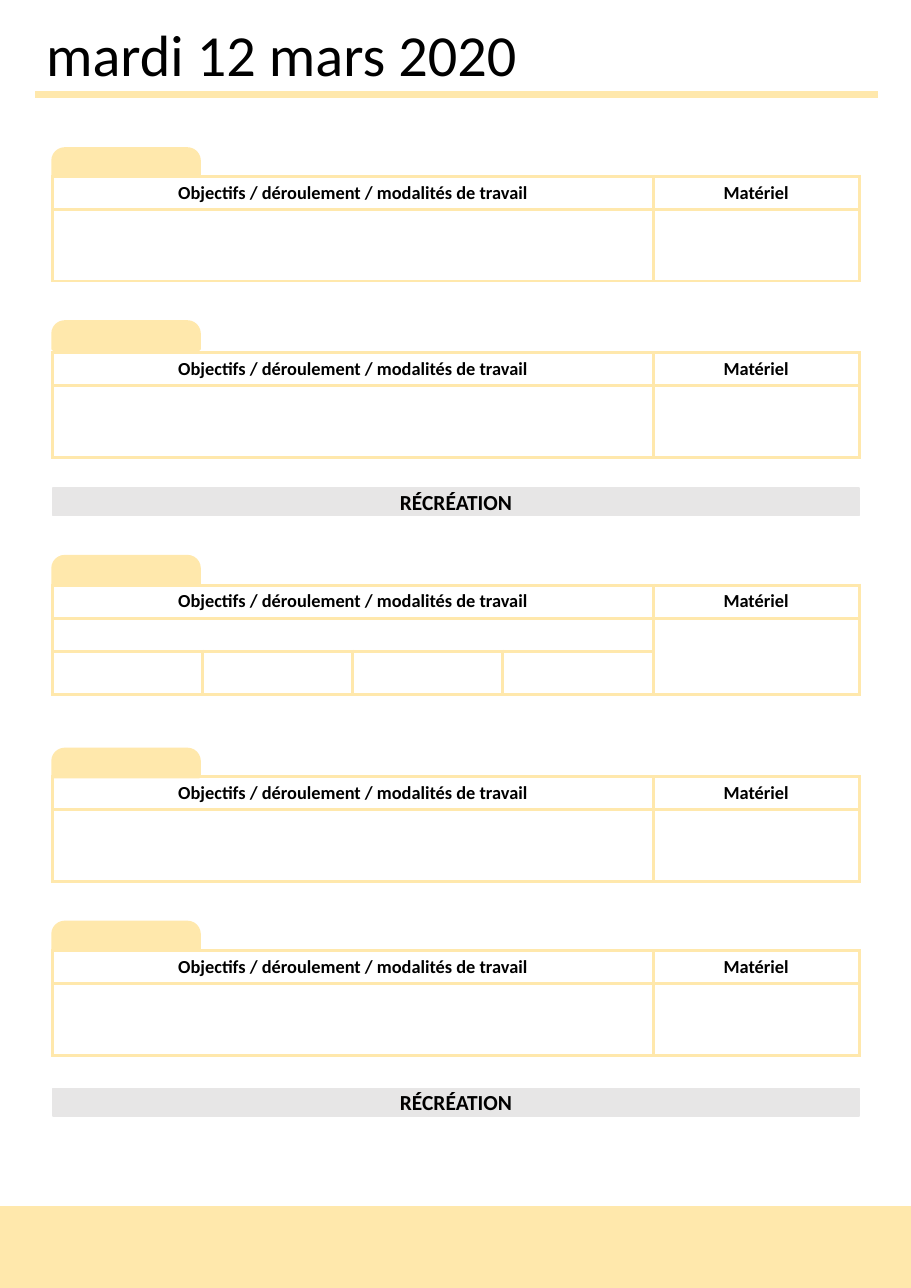
from pptx import Presentation
from pptx import util as u
from pptx.dml.color import RGBColor
from pptx.enum import shapes, text
from pptx.oxml import parse_xml
from pptx.oxml.ns import nsdecls

# Content
TITLE = "mardi 12 mars 2020"
HEADS = ["Objectifs / déroulement / modalités de travail", "Matériel"]
BREAK = "RÉCRÉATION"
PLAIN = {"cols": [545, 187], "rows": [30, 65], "spans": []}
SPLIT = {"cols": [136, 136, 136, 137, 187], "rows": [30, 30, 39],
         "spans": [(0, 0, 0, 3), (1, 0, 1, 3), (1, 4, 2, 4)]}
# (top of tab, top of table, layout)
LESSONS = [(135, 160, PLAIN), (292, 320, PLAIN), (505, 531, SPLIT),
           (680, 705, PLAIN), (837, 863, PLAIN)]
BREAKS = [443, 988]

# Look
THEME = {"font": "Calibri", "ink": "000000", "gold": "FFE8AC",
         "grey": "E7E6E6", "white": "FFFFFF",
         "title": 38, "head": 12, "break": 14, "grid": 2.25, "rule": 4.75}

# Page, in px at 100 to the inch
PX = 9144
WIDE, HIGH = 827, 1169
LEFT, SPAN = 48, 732
TAB_W, TAB_H = 133, 25
FOOT = 74

KIND = shapes.MSO_SHAPE


def px(*nums):
    return [u.Emu(n * PX) for n in nums]


def rgb(name):
    return RGBColor.from_string(THEME[name])


def put(item, values):
    for name, value in values.items():
        setattr(item, name, value)


def write(frame, words, size, bold=False, align=text.PP_ALIGN.CENTER):
    para = frame.paragraphs[0]
    para.alignment = align
    run = para.add_run()
    run.text = words
    put(run.font, {"name": THEME["font"], "size": u.Pt(THEME[size]), "bold": bold})
    run.font.color.rgb = rgb("ink")


def block(kind, box, color, line):
    shape = slide.shapes.add_shape(kind, *px(*box))
    shape.shadow.inherit = False
    shape.fill.solid()
    shape.fill.fore_color.rgb = rgb(color)
    shape.line.color.rgb = rgb(color)
    shape.line.width = u.Pt(line)
    return shape


def dress(cell):
    cell.fill.solid()
    cell.fill.fore_color.rgb = rgb("white")
    cell.vertical_anchor = text.MSO_ANCHOR.MIDDLE
    props = cell._tc.get_or_add_tcPr()
    for spot, side in enumerate("LRTB"):
        props.insert(spot, parse_xml(
            f'<a:ln{side} {nsdecls("a")} w="{u.Pt(THEME["grid"])}"><a:solidFill>'
            f'<a:srgbClr val="{THEME["gold"]}"/></a:solidFill></a:ln{side}>'))
    # Empty cells keep the small type size, so rows stay low
    cell.text_frame.paragraphs[0]._p.append(parse_xml(
        f'<a:endParaRPr {nsdecls("a")} sz="{THEME["head"] * 100}"/>'))


def lesson(tab, top, plan):
    cols, rows = plan["cols"], plan["rows"]
    grid = slide.shapes.add_table(
        len(rows), len(cols), *px(LEFT, top, sum(cols), sum(rows))).table
    put(grid, {"first_row": False, "horz_banding": False})
    for col, size in zip(grid.columns, cols):
        col.width = u.Emu(size * PX)
    for row, size in zip(grid.rows, rows):
        row.height = u.Emu(size * PX)
    for cell in grid.iter_cells():
        dress(cell)
    for r1, c1, r2, c2 in plan["spans"]:
        grid.cell(r1, c1).merge(grid.cell(r2, c2))
    for col, words in zip((0, len(cols) - 1), HEADS):
        write(grid.cell(0, col).text_frame, words, "head", True)
    shape = block(KIND.ROUND_2_SAME_RECTANGLE, (LEFT, tab, TAB_W, TAB_H), "gold", 2)
    shape.adjustments[0] = 0.43


deck = Presentation()
put(deck, dict(zip(("slide_width", "slide_height"), px(WIDE, HIGH))))
slide = deck.slides.add_slide(deck.slide_layouts[6])

# Title and rule
frame = slide.shapes.add_textbox(*px(32, 12, 626, 74)).text_frame
frame.word_wrap = True
write(frame, TITLE, "title", align=text.PP_ALIGN.LEFT)
rule = slide.shapes.add_connector(shapes.MSO_CONNECTOR.STRAIGHT, *px(32, 86, 797, 86))
rule.line.color.rgb = rgb("gold")
rule.line.width = u.Pt(THEME["rule"])
rule._element.spPr.append(parse_xml(f'<a:effectLst {nsdecls("a")}/>'))

# Lessons
for item in LESSONS:
    lesson(*item)

# Breaks
for top in BREAKS:
    bar = block(KIND.RECTANGLE, (LEFT, top, SPAN, 25), "grey", 1)
    bar.text_frame.vertical_anchor = text.MSO_ANCHOR.MIDDLE
    write(bar.text_frame, BREAK, "break", True)

# Footer band
block(KIND.RECTANGLE, (0, HIGH - FOOT, WIDE, FOOT), "gold", 1)

deck.save("out.pptx")
